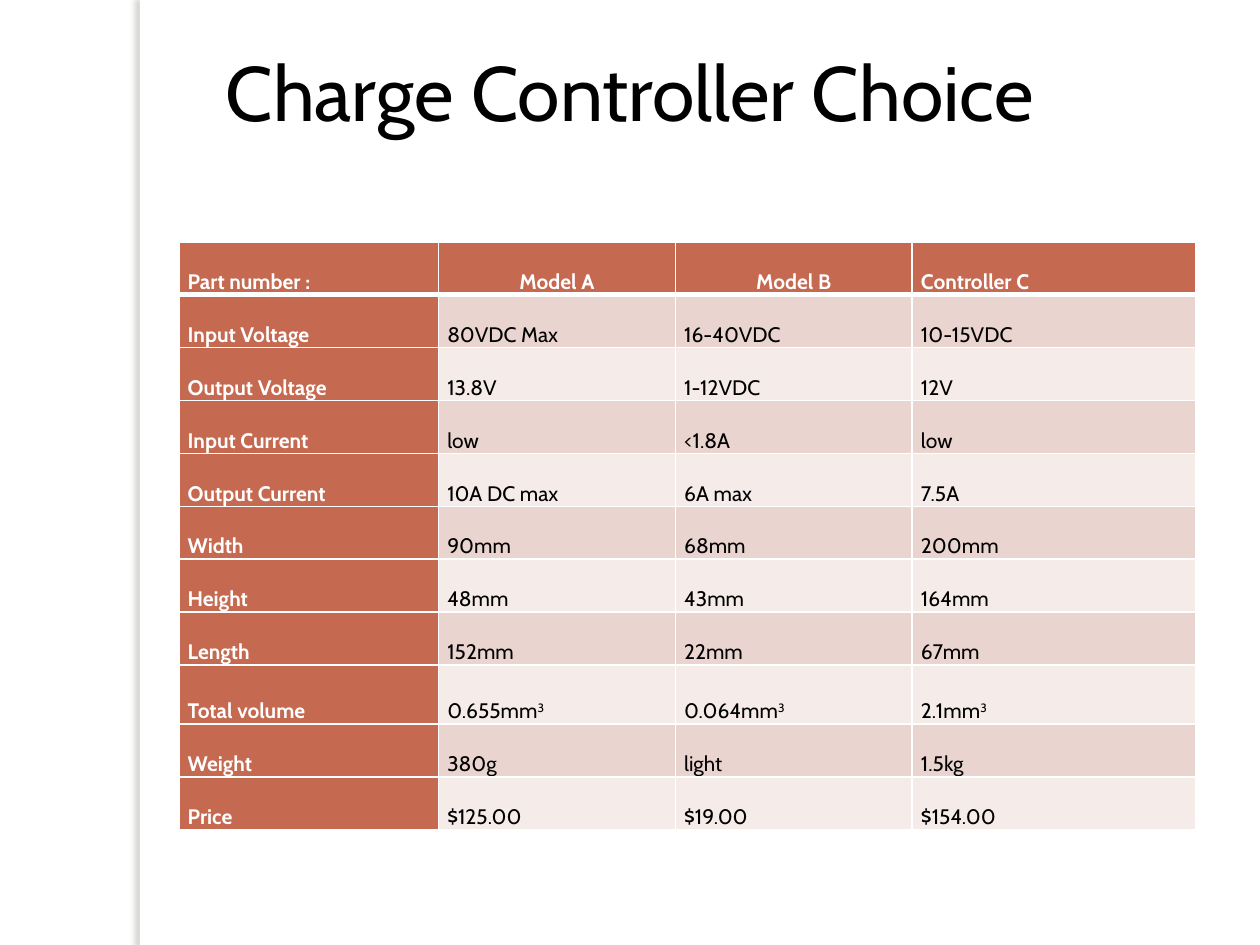
from pptx import Presentation
from pptx import util as u
from pptx.dml.color import RGBColor
from pptx.enum import shapes, text
from pptx.oxml import parse_xml
from pptx.oxml.ns import nsdecls

FONT = "Cabin"
WHITE, BLACK = "FFFFFF", "000000"
RUST, DARK_BAND, LIGHT_BAND = "C66951", "EAD4D0", "F5EBE9"
COLUMN_WIDTHS = [2.06, 1.88, 1.88, 2.25]
ROW_HEIGHT, VOLUME_ROW_HEIGHT = 0.42, 0.47

# A caret marks the start of a superscript.
CONTROLLERS = [
    ("Part number :", "Model A", "Model B", "Controller C"),
    ("Input Voltage", "80VDC Max", "16-40VDC", "10-15VDC"),
    ("Output Voltage", "13.8V", "1-12VDC", "12V"),
    ("Input Current", "low", "<1.8A", "low"),
    ("Output Current", "10A DC max", "6A max", "7.5A"),
    ("Width", "90mm", "68mm", "200mm"),
    ("Height", "48mm", "43mm", "164mm"),
    ("Length", "152mm", "22mm", "67mm"),
    ("Total volume", "0.655mm^3", "0.064mm^3", "2.1mm^3"),
    ("Weight", "380g", "light", "1.5kg"),
    ("Price", "$125.00", "$19.00", "$154.00"),
]


def color(value):
    return RGBColor.from_string(value)


def write(frame, content, size=12, fill=BLACK, bold=False, align="LEFT",
          line_spacing=None, space_after=None):
    """Fill the frame's first paragraph, raising what follows a caret."""
    paragraph = frame.paragraphs[0]
    paragraph.alignment = getattr(text.PP_ALIGN, align)
    paragraph.line_spacing = line_spacing
    paragraph.space_after = space_after
    for index, part in enumerate(content.split("^")):
        run = paragraph.add_run()
        run.text = part
        run.font.name, run.font.size, run.font.bold = FONT, u.Pt(size), bold
        run.font.color.rgb = color(fill)
        if index:
            run.font._element.set("baseline", "30000")


def add_title(slide, left, top, width, height):
    title = slide.shapes.title
    title.left, title.top = u.Inches(left), u.Inches(top)
    title.width, title.height = u.Inches(width), u.Inches(height)
    title.text_frame.vertical_anchor = text.MSO_ANCHOR.TOP
    write(title.text_frame, "Charge Controller Choice", size=44, align="CENTER")


def add_side_strip(slide, left, top, width, height):
    """White strip that casts a soft shadow to its left."""
    strip = slide.shapes.add_shape(
        shapes.MSO_SHAPE.RECTANGLE, *map(u.Inches, (left, top, width, height)))
    strip.fill.solid()
    strip.fill.fore_color.rgb = color(WHITE)
    strip.line.fill.background()
    strip._element.spPr.append(parse_xml(
        f'<a:effectLst {nsdecls("a")}><a:outerShdw blurRad="{u.Pt(3)}" '
        f'dist="{u.Pt(3)}" dir="10800000" algn="tl" rotWithShape="0">'
        '<a:srgbClr val="66685B"><a:alpha val="25000"/></a:srgbClr>'
        '</a:outerShdw></a:effectLst>'))


def set_borders(cell, top=1, bottom=1):
    properties = cell._tc.get_or_add_tcPr()
    for side, width in (("L", 1), ("R", 1), ("T", top), ("B", bottom)):
        properties.append(parse_xml(
            f'<a:ln{side} {nsdecls("a")} w="{u.Pt(width)}"><a:solidFill>'
            f'<a:srgbClr val="{WHITE}"/></a:solidFill></a:ln{side}>'))


def format_cell(cell, content, row, column):
    heading = row == 0 or column == 0
    set_borders(cell, top=3 if row == 1 else 1, bottom=3 if row == 0 else 1)
    cell.fill.solid()
    band = DARK_BAND if row % 2 else LIGHT_BAND
    cell.fill.fore_color.rgb = color(RUST if heading else band)
    cell.margin_left = cell.margin_right = u.Inches(0.07)
    cell.margin_top = cell.margin_bottom = 0
    cell.vertical_anchor = text.MSO_ANCHOR.BOTTOM
    write(cell.text_frame, content, fill=WHITE if heading else BLACK,
          bold=heading, line_spacing=1.15, space_after=u.Pt(12),
          align="CENTER" if row == 0 and column in (1, 2) else "LEFT")


def add_comparison_table(slide, left, top, width, height):
    frame = slide.shapes.add_table(
        len(CONTROLLERS), len(COLUMN_WIDTHS),
        *map(u.Inches, (left, top, width, height)))
    table = frame.table
    for column, column_width in zip(table.columns, COLUMN_WIDTHS):
        column.width = u.Inches(column_width)
    for row, values in enumerate(CONTROLLERS):
        is_volume = values[0] == "Total volume"
        table.rows[row].height = u.Inches(
            VOLUME_ROW_HEIGHT if is_volume else ROW_HEIGHT)
        for column, content in enumerate(values):
            format_cell(table.cell(row, column), content, row, column)


def main():
    presentation = Presentation()
    presentation.slide_width = u.Inches(10)
    presentation.slide_height = u.Inches(7.5)
    slide = presentation.slides.add_slide(presentation.slide_layouts[5])
    add_side_strip(slide, 1.11, 0, 0.08, 7.5)
    add_comparison_table(slide, 1.42, 1.92, 8.08, 4.67)
    add_title(slide, 0.5, 0.3, 9, 1.25)
    presentation.save("out.pptx")


if __name__ == "__main__":
    main()
